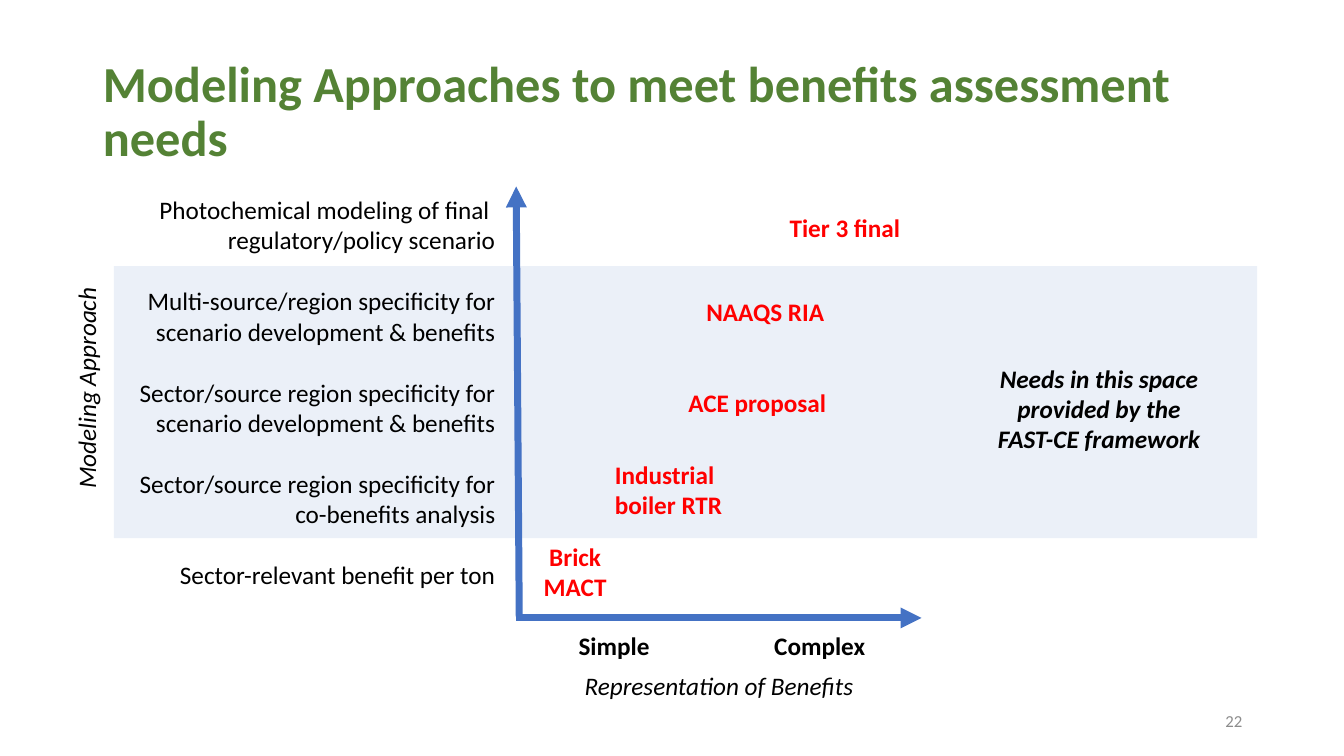
"""Builds the slide on modeling approaches for benefits assessment."""
from dataclasses import dataclass

from lxml.etree import SubElement
from pptx import Presentation
from pptx.dml.color import RGBColor
from pptx.enum.shapes import MSO_CONNECTOR, MSO_SHAPE
from pptx.enum.text import MSO_ANCHOR, MSO_AUTO_SIZE, PP_ALIGN
from pptx.oxml.ns import qn
from pptx.util import Pt

EMU_PER_PX = 9144
TITLE_ONLY = 5


def px(length):
    return length * EMU_PER_PX


@dataclass(frozen=True)
class Theme:
    font: str = "Calibri"
    title: str = "548235"
    accent: str = "4472C4"
    ink: str = "000000"
    example: str = "FF0000"
    muted: str = "8C8C8C"
    title_size: int = 36
    body_size: int = 18
    number_size: int = 12
    row_gap: int = 22
    axis_width: int = 5
    band_opacity: int = 10


class SlideBuilder:
    def __init__(self, slide, theme):
        self.slide = slide
        self.theme = theme

    def add_runs(self, paragraph, text, size, color, bold=False, italic=False):
        for index, line in enumerate(text.split("\n")):
            if index:
                paragraph.add_line_break()
            run = paragraph.add_run()
            run.text = line
            font = run.font
            font.name = self.theme.font
            font.size = Pt(size)
            font.bold = bold
            font.italic = italic
            font.color.rgb = RGBColor.from_string(color)

    def title(self, text, left, top, width, height):
        shape = self.slide.shapes.title
        shape.left, shape.top, shape.width, shape.height = map(px, (left, top, width, height))
        frame = shape.text_frame
        frame.word_wrap = True
        frame.auto_size = MSO_AUTO_SIZE.NONE
        frame.vertical_anchor = MSO_ANCHOR.MIDDLE
        paragraph = frame.paragraphs[0]
        paragraph.alignment = PP_ALIGN.LEFT
        paragraph.line_spacing = 0.9
        self.add_runs(paragraph, text, self.theme.title_size, self.theme.title, bold=True)

    def band(self, left, top, width, height):
        shape = self.slide.shapes.add_shape(
            MSO_SHAPE.RECTANGLE, *map(px, (left, top, width, height)))
        shape.shadow.inherit = False
        shape.line.fill.background()
        shape.fill.solid()
        shape.fill.fore_color.rgb = RGBColor.from_string(self.theme.accent)
        color = shape._element.spPr.find(qn("a:solidFill"))[0]
        SubElement(color, qn("a:alpha")).set("val", str(self.theme.band_opacity * 1000))

    def arrow(self, start, end):
        connector = self.slide.shapes.add_connector(
            MSO_CONNECTOR.STRAIGHT, *map(px, (*start, *end)))
        connector.line.width = Pt(self.theme.axis_width)
        connector.line.color.rgb = RGBColor.from_string(self.theme.accent)
        properties = connector._element.spPr
        SubElement(properties.find(qn("a:ln")), qn("a:tailEnd")).set("type", "triangle")
        SubElement(properties, qn("a:effectLst"))

    def text(self, paragraphs, left, top, width, height, color=None, size=None,
             alignment=PP_ALIGN.CENTER, bold=False, italic=False, rotation=0,
             anchor=MSO_ANCHOR.TOP):
        box = self.slide.shapes.add_textbox(*map(px, (left, top, width, height)))
        box.rotation = rotation
        frame = box.text_frame
        frame.word_wrap = True
        frame.vertical_anchor = anchor
        for index, content in enumerate(paragraphs):
            paragraph = frame.add_paragraph() if index else frame.paragraphs[0]
            paragraph.alignment = alignment
            paragraph.space_before = Pt(self.theme.row_gap if index else 0)
            self.add_runs(paragraph, content, size or self.theme.body_size,
                          color or self.theme.ink, bold, italic)


APPROACHES = [
    "Photochemical modeling of final \nregulatory/policy scenario",
    "Multi-source/region specificity for scenario development & benefits",
    "Sector/source region specificity for scenario development & benefits",
    "Sector/source region specificity for co-benefits analysis",
    "Sector-relevant benefit per ton",
]
EXAMPLES = [
    ("Tier 3 final", 750, 206, 176, 40, PP_ALIGN.CENTER),
    ("NAAQS RIA", 670, 289, 178, 40, PP_ALIGN.CENTER),
    ("ACE proposal", 662, 379, 178, 40, PP_ALIGN.CENTER),
    ("Industrial boiler RTR", 600, 451, 133, 71, PP_ALIGN.LEFT),
    ("Brick MACT", 507, 532, 127, 71, PP_ALIGN.CENTER),
]
SCALE_LABELS = [("Simple", 549), ("Complex", 753)]


def main():
    presentation = Presentation()
    presentation.slide_width = px(1333)
    presentation.slide_height = px(750)
    theme = Theme()
    slide = presentation.slides.add_slide(presentation.slide_layouts[TITLE_ONLY])
    builder = SlideBuilder(slide, theme)

    builder.band(113, 264, 1134, 270)
    builder.title("Modeling Approaches to meet benefits assessment needs", 92, 40, 1175, 145)
    builder.arrow((512, 613), (914, 613))
    builder.arrow((515, 612), (512, 185))
    builder.text(APPROACHES, 117, 188, 384, 404, alignment=PP_ALIGN.RIGHT)
    for label, left, top, width, height, alignment in EXAMPLES:
        builder.text([label], left, top, width, height, color=theme.example,
                     alignment=alignment, bold=True)
    for label, left in SCALE_LABELS:
        builder.text([label], left, 620, 120, 40, bold=True)
    builder.text(["Representation of Benefits"], 570, 660, 331, 40,
                 alignment=PP_ALIGN.LEFT, italic=True)
    builder.text(["Modeling Approach"], -80, 365, 331, 40, italic=True, rotation=270)
    builder.text(["Needs in this space provided by the FAST-CE framework"],
                 969, 355, 242, 101, bold=True, italic=True)
    builder.text(["22"], 942, 695, 300, 40, color=theme.muted, size=theme.number_size,
                 alignment=PP_ALIGN.RIGHT, anchor=MSO_ANCHOR.MIDDLE)
    presentation.save("out.pptx")


if __name__ == "__main__":
    main()
